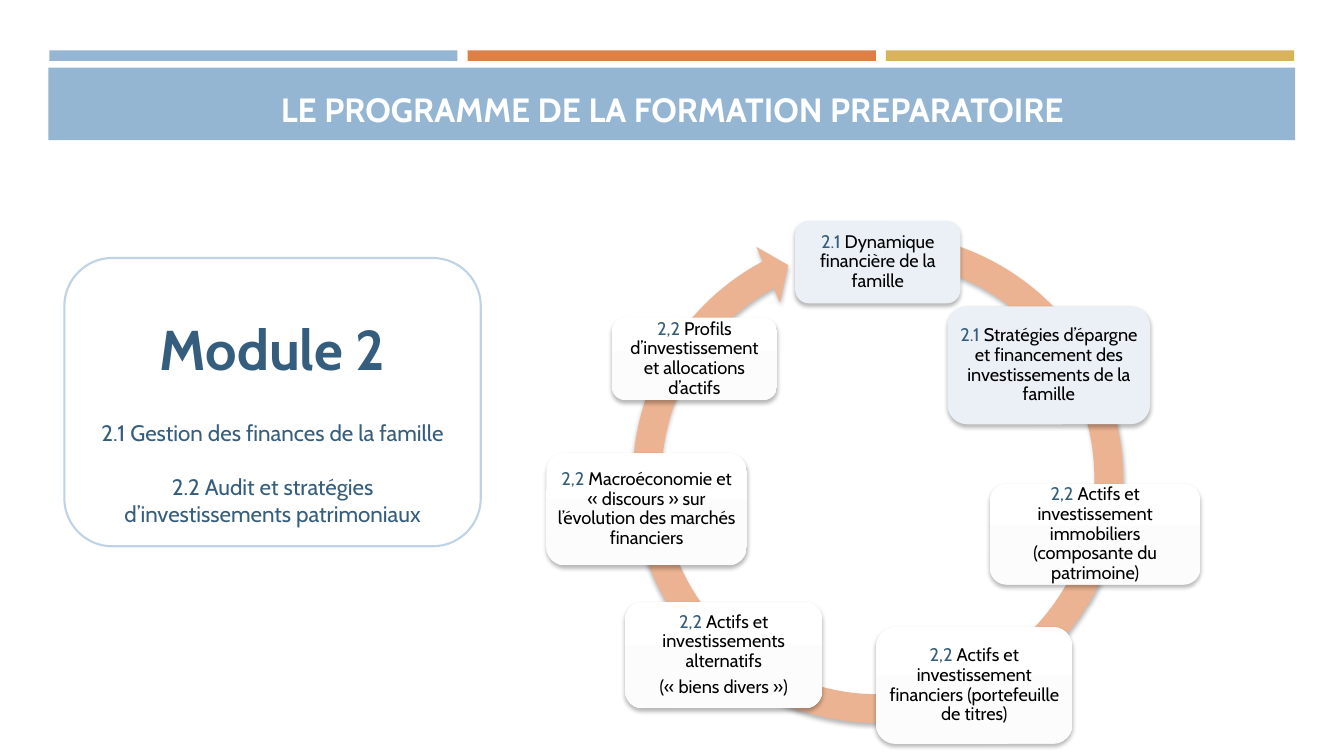
from copy import deepcopy

from lxml.etree import SubElement
from pptx import Presentation
from pptx.dml.color import RGBColor
from pptx.enum.shapes import MSO_SHAPE as Shape
from pptx.enum.text import MSO_ANCHOR as Anchor, PP_ALIGN as Align
from pptx.oxml.ns import qn
from pptx.util import Pt

BLUE, ORANGE, GOLD = "94B6D2", "DD8047", "D8B25C"
NAVY, WHITE, BLACK = "355D7E", "FFFFFF", "000000"
PALE, PEACH, OUTLINE = "EAF0F6", "EBB391", "BFD3E4"


def color(code):
    return RGBColor.from_string(code)


class ProgrammeSlide:
    font = "Cabin"

    def __init__(self, deck):
        self.page = deck.slides.add_slide(deck.slide_layouts[6])

    def shape(self, kind, frame, fill=None, line=None):
        box = self.page.shapes.add_shape(kind, *map(Pt, frame))
        box.shadow.inherit = False
        if fill:
            box.fill.solid()
            box.fill.fore_color.rgb = color(fill)
        else:
            self.sheen(box)
        if line:
            box.line.color.rgb = color(line)
            box.line.width = Pt(1.5)
        else:
            box.line.fill.background()
        return box

    def sheen(self, box):
        box.fill.gradient()
        box.fill.gradient_angle = 270
        stops = box._element.spPr.find(qn("a:gradFill")).find(qn("a:gsLst"))
        stops.insert(1, deepcopy(stops[0]))
        shades = ((0, WHITE), (0.41, "FCFCFC"), (1, WHITE))
        for stop, (position, shade) in zip(box.fill.gradient_stops, shades):
            stop.position = position
            stop.color.rgb = color(shade)

    def cast_shadow(self, box):
        effects = box._element.spPr.find(qn("a:effectLst"))
        shadow = SubElement(effects, qn("a:outerShdw"), blurRad=str(Pt(3)),
                            dist=str(Pt(2)), dir="5400000", rotWithShape="0")
        tint = SubElement(shadow, qn("a:srgbClr"), val=BLACK)
        SubElement(tint, qn("a:alpha"), val="28000")

    def style(self, span, size, tint, bold=False):
        span.font.name = self.font
        span.font.size = Pt(size)
        span.font.bold = bold
        span.font.color.rgb = color(tint)

    def set_text(self, box, lines, size, tint, bold=False, anchor=Anchor.TOP, gap=0):
        frame = box.text_frame
        frame.word_wrap = True
        frame.vertical_anchor = anchor
        frame.text = "\n".join(lines)
        for para in frame.paragraphs:
            para.alignment = Align.CENTER
            for span in para.runs:
                self.style(span, size, tint, bold)
        for para in frame.paragraphs[1:]:
            para.space_before = Pt(gap)

    def label(self, frame, *text, **look):
        box = self.page.shapes.add_textbox(*map(Pt, frame))
        self.set_text(box, text, **look)

    def cycle_arrow(self, frame, adjustments):
        arrow = self.shape(Shape.CIRCULAR_ARROW, frame, PEACH)
        for index, value in enumerate(adjustments):
            arrow.adjustments[index] = value
        self.cast_shadow(arrow)

    def step(self, number, lines, frame, fill):
        box = self.shape(Shape.ROUNDED_RECTANGLE, frame, fill)
        self.cast_shadow(box)
        text = box.text_frame
        text.margin_left = text.margin_right = Pt(3.6)
        text.margin_top = text.margin_bottom = Pt(3.6)
        self.set_text(box, [f"{number} ", *lines[1:]], 13, BLACK, anchor=Anchor.MIDDLE)
        first = text.paragraphs[0]
        self.style(first.runs[0], 13, NAVY)
        span = first.add_run()
        span.text = lines[0]
        self.style(span, 13, BLACK)
        for para in text.paragraphs:
            para.line_spacing = 0.9
            para.space_after = Pt(4.5)


STEPS = [
    ("2.1", ["Dynamique financière de la famille"], (568, 157.7, 118, 59), PALE),
    ("2.1", ["Stratégies d’épargne et financement des investissements de la famille"],
     (676.8, 218.9, 144.7, 84.2), PALE),
    ("2,2", ["Actifs et investissement immobiliers (composante du patrimoine)"],
     (707, 345.6, 150.5, 72), None),
    ("2,2", ["Actifs et investissement financiers (portefeuille de titres)"],
     (625.7, 447.8, 140.4, 83.5), None),
    ("2,2", ["Actifs et investissements alternatifs", "(« biens divers »)"],
     (446.4, 429.8, 141.1, 76.3), None),
    ("2,2", ["Macroéconomie et « discours » sur l’évolution des marchés financiers"],
     (390.2, 323.3, 143.3, 80.6), None),
    ("2,2", ["Profils d’investissement et allocations d’actifs"],
     (437, 226.8, 118, 59), None),
]


def main():
    deck = Presentation()
    deck.slide_width, deck.slide_height = Pt(960), Pt(540)
    slide = ProgrammeSlide(deck)

    for column, fill in enumerate((BLUE, ORANGE, GOLD)):
        slide.shape(Shape.RECTANGLE, (35.2 + 298.8 * column, 36, 291.6, 7.5), fill)
    slide.shape(Shape.RECTANGLE, (34.6, 48.3, 890.6, 51.8), BLUE)

    slide.cycle_arrow((440.6, 154.8, 373, 373), (0.055, 3.307, 144.966, 169.612, 0.058))
    for step in STEPS:
        slide.step(*step)

    module = slide.shape(Shape.ROUNDED_RECTANGLE, (46, 184.3, 297.4, 205.9), WHITE, OUTLINE)
    module.text_frame.margin_top = Pt(30)
    slide.set_text(module, ["Module 2"], 40, NAVY, bold=True)
    slide.label((57.6, 295.9, 274.3, 104.4), "2.1 Gestion des finances de la famille",
                "2.2 Audit et stratégies d’investissements patrimoniaux",
                size=16, tint=NAVY, gap=19.4)
    slide.label((46, 55.4, 868.3, 40.3), "LE PROGRAMME DE LA FORMATION PREPARATOIRE",
                size=24, tint=WHITE, bold=True, anchor=Anchor.BOTTOM)
    deck.save("out.pptx")


if __name__ == "__main__":
    main()
